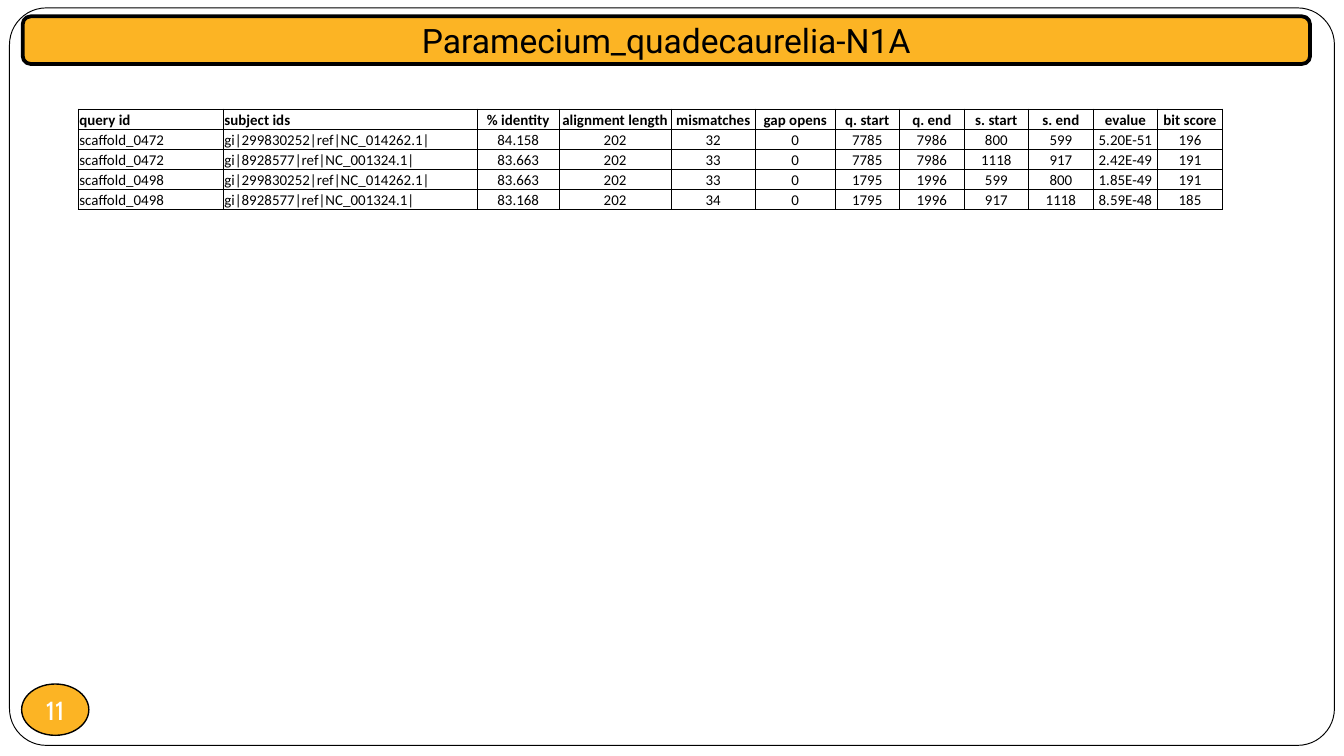
"""Build a slide with a table of sequence alignment hits."""
from lxml.etree import SubElement
from pptx import Presentation
from pptx.dml.color import RGBColor
from pptx.enum.shapes import MSO_SHAPE as Shape
from pptx.enum.text import MSO_ANCHOR as Anchor, PP_ALIGN as Align
from pptx.oxml import parse_xml
from pptx.oxml.ns import nsdecls, qn
from pptx.util import Cm, Pt

BLACK = RGBColor(0x00, 0x00, 0x00)
WHITE = RGBColor(0xFF, 0xFF, 0xFF)
AMBER = RGBColor(0xFC, 0xB4, 0x24)

TITLE = "Paramecium_quadecaurelia-N1A"
PAGE_NUMBER = "11"
COLUMNS = [
    ("query id", 2.74), ("subject ids", 4.8), ("% identity", 1.55),
    ("alignment length", 2.11), ("mismatches", 1.6), ("gap opens", 1.5),
    ("q. start", 1.22), ("q. end", 1.22), ("s. start", 1.22),
    ("s. end", 1.22), ("evalue", 1.22), ("bit score", 1.22),
]
HITS = [
    ("scaffold_0472", "gi|299830252|ref|NC_014262.1|", "84.158", "202", "32", "0",
     "7785", "7986", "800", "599", "5.20E-51", "196"),
    ("scaffold_0472", "gi|8928577|ref|NC_001324.1|", "83.663", "202", "33", "0",
     "7785", "7986", "1118", "917", "2.42E-49", "191"),
    ("scaffold_0498", "gi|299830252|ref|NC_014262.1|", "83.663", "202", "33", "0",
     "1795", "1996", "599", "800", "1.85E-49", "191"),
    ("scaffold_0498", "gi|8928577|ref|NC_001324.1|", "83.168", "202", "34", "0",
     "1795", "1996", "917", "1118", "8.59E-48", "185"),
]
ROW_HEIGHT = 0.38
LEFT_ALIGNED_COLUMNS = 2


def write(text_frame, text, font_name, size, color, align, bold=False):
    text_frame.text = text
    paragraph = text_frame.paragraphs[0]
    paragraph.alignment = align
    font = paragraph.runs[0].font
    font.name, font.size, font.bold = font_name, Pt(size), bold
    font.color.rgb = color


def add_panel(slide, kind, box, fill, line_width):
    shape = slide.shapes.add_shape(kind, *map(Cm, box))
    shape.shadow.inherit = False
    shape.fill.solid()
    shape.fill.fore_color.rgb = fill
    shape.line.color.rgb = BLACK
    shape.line.width = Pt(line_width)
    shape.text_frame.vertical_anchor = Anchor.MIDDLE
    return shape


def add_borders(cell):
    properties = cell._tc.get_or_add_tcPr()
    for index, side in enumerate(("lnL", "lnR", "lnT", "lnB")):
        border = parse_xml(f'<a:{side} {nsdecls("a")} w="{Pt(0.5)}"/>')
        fill = SubElement(border, qn("a:solidFill"))
        SubElement(fill, qn("a:srgbClr"), val=str(BLACK))
        properties.insert(index, border)


def add_hit_table(slide):
    rows = [[name for name, width in COLUMNS], *HITS]
    total_width = sum(width for name, width in COLUMNS)
    table = slide.shapes.add_table(
        len(rows), len(COLUMNS), Cm(1.48), Cm(2.06),
        Cm(total_width), Cm(ROW_HEIGHT * len(rows))).table
    table.first_row = table.horz_banding = False
    for column, (name, width) in zip(table.columns, COLUMNS):
        column.width = Cm(width)
    for row_index, values in enumerate(rows):
        table.rows[row_index].height = Cm(ROW_HEIGHT)
        for column_index, value in enumerate(values):
            cell = table.cell(row_index, column_index)
            cell.margin_left = cell.margin_right = cell.margin_top = Cm(0.02)
            cell.margin_bottom = 0
            cell.vertical_anchor = Anchor.BOTTOM
            cell.fill.background()
            add_borders(cell)
            align = Align.LEFT if column_index < LEFT_ALIGNED_COLUMNS else Align.CENTER
            write(cell.text_frame, value, "Calibri", 8, BLACK, align, row_index == 0)


def main():
    presentation = Presentation()
    presentation.slide_width, presentation.slide_height = Cm(25.4), Cm(14.29)
    slide = presentation.slides.add_slide(presentation.slide_layouts[6])

    frame = add_panel(slide, Shape.ROUNDED_RECTANGLE, (0.18, 0.15, 25.04, 13.94), WHITE, 0.5)
    frame.adjustments[0] = 0.05

    badge = add_panel(slide, Shape.OVAL, (0.41, 12.93, 1.27, 0.97), AMBER, 0.75)
    text_frame = badge.text_frame
    text_frame.margin_left = text_frame.margin_right = 0
    text_frame.margin_top = text_frame.margin_bottom = 0
    text_frame.word_wrap = False
    write(text_frame, PAGE_NUMBER, "Cabin", 14, WHITE, Align.CENTER)

    banner = add_panel(slide, Shape.ROUNDED_RECTANGLE, (0.43, 0.31, 24.33, 0.9), AMBER, 2)
    write(banner.text_frame, TITLE, "Roboto", 18, BLACK, Align.CENTER)

    add_hit_table(slide)
    presentation.save("out.pptx")


if __name__ == "__main__":
    main()
